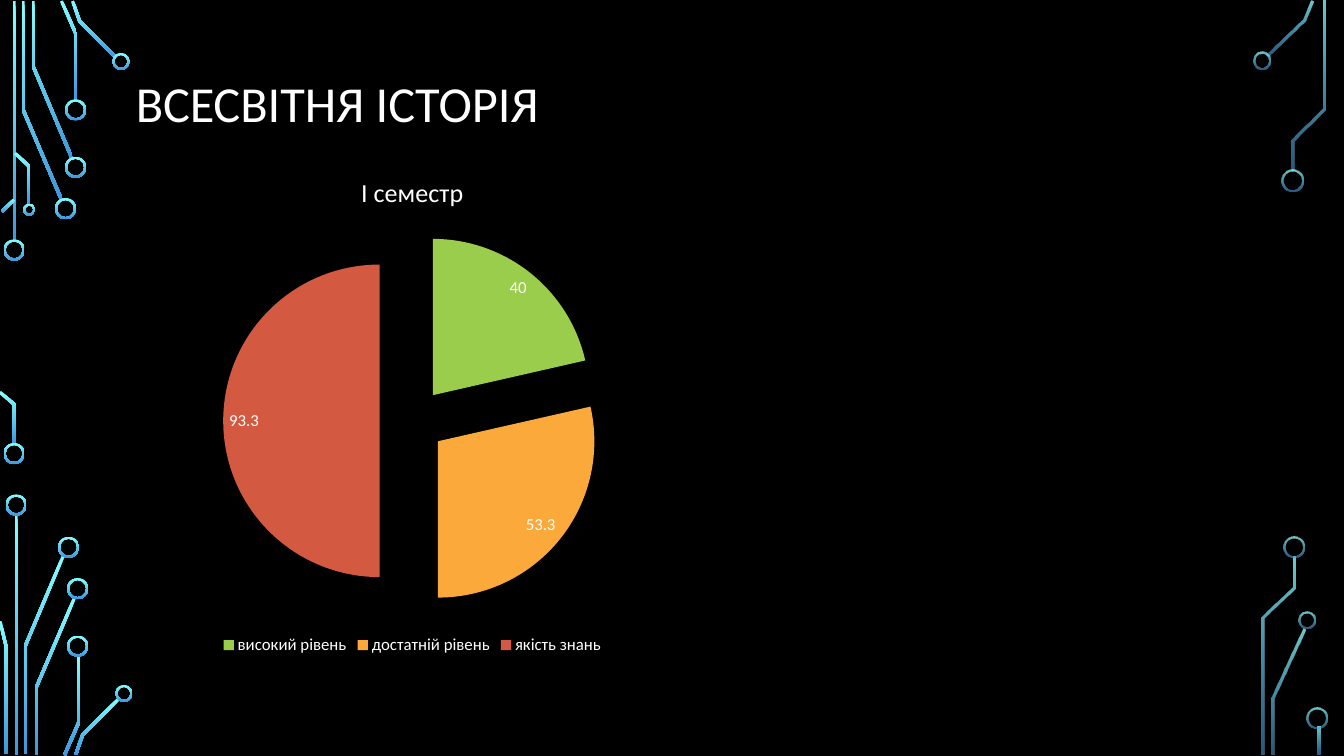
import math

import lxml.etree
import pptx
import pptx.chart.data
import pptx.dml.color
import pptx.enum.chart
import pptx.enum.shapes
import pptx.enum.text
import pptx.oxml.ns
import pptx.util

BLACK = pptx.dml.color.RGBColor(0x00, 0x00, 0x00)
WHITE = pptx.dml.color.RGBColor(0xFF, 0xFF, 0xFF)
AQUA = pptx.dml.color.RGBColor(0x82, 0xFF, 0xFF)
BLUE = pptx.dml.color.RGBColor(0x3D, 0x97, 0xDE)
GREEN = pptx.dml.color.RGBColor(0x9A, 0xCD, 0x4C)
ORANGE = pptx.dml.color.RGBColor(0xFA, 0xA9, 0x3A)
RED = pptx.dml.color.RGBColor(0xD3, 0x59, 0x40)

FONT = "Calibri"
SEMESTER = "І семестр"
LEVELS = [
    ("високий рівень", 40, GREEN),
    ("достатній рівень", 53.3, ORANGE),
    ("якість знань", 93.3, RED),
]

TRACE_WIDTH = 0.03
RING_WIDTH = 0.02
LARGE, MEDIUM, SMALL = 0.21, 0.17, 0.12

LEFT_TRACES = [
    [(0.14, 0.01), (0.14, 2.4)],
    [(0.61, 1.98), (0.23, 1.09), (0.23, 0.01)],
    [(0.71, 1.56), (0.33, 0.66), (0.33, 0.01)],
    [(0.75, 1), (0.75, 0.33), (0.61, 0.01)],
    [(1.15, 0.57), (0.79, 0.21), (0.72, 0.01)],
    [(0.02, 2.1), (0.14, 1.98)],
    [(0.14, 4.41), (0.14, 4.01), (0, 3.89)],
    [(0.29, 2.03), (0.29, 1.65), (0.15, 1.52)],
    [(0.16, 5.1), (0.16, 7.49)],
    [(0.25, 7.48), (0.25, 6.41), (0.63, 5.51)],
    [(0.06, 7.48), (0.06, 6.41), (0, 6.16)],
    [(0.36, 7.49), (0.36, 6.82), (0.74, 5.93)],
    [(0.64, 7.49), (0.78, 7.17), (0.78, 6.5)],
    [(0.75, 7.49), (0.82, 7.29), (1.18, 6.93)],
]
LEFT_RINGS = [
    (0.14, 2.48, LARGE), (0.14, 4.5, LARGE), (0.65, 2.07, LARGE),
    (0.75, 1.66, LARGE), (0.75, 1.09, LARGE), (1.2, 0.61, MEDIUM),
    (0.29, 2.08, SMALL), (0.16, 5.01, LARGE), (0.68, 5.43, LARGE),
    (0.77, 5.84, LARGE), (0.77, 6.41, LARGE), (1.23, 6.88, MEDIUM),
]
RIGHT_TRACES = [
    [(12.57, 0.55), (12.93, 0.2), (13.01, 0.01)],
    [(12.63, 7.49), (12.63, 6.93), (12.93, 6.24)],
    [(12.82, 1.69), (12.82, 1.39), (13.13, 1.08), (13.13, 0.01)],
    [(12.53, 7.49), (12.53, 6.13), (12.83, 5.83), (12.83, 5.52)],
    [(13.08, 7.49), (13.08, 7.21)],
]
RIGHT_RINGS = [
    (12.52, 0.6, MEDIUM), (12.82, 1.79, LARGE), (12.96, 6.15, MEDIUM),
    (12.83, 5.43, LARGE), (13.06, 7.12, LARGE),
]


def inches(value):
    return pptx.util.Cm(value * 2.54)


def style_font(font, size):
    font.name = FONT
    font.size = pptx.util.Pt(size)
    font.bold = False
    font.color.rgb = WHITE


def paint_circuit(shape, opacities):
    shape.shadow.inherit = False
    shape.line.fill.background()
    shape.fill.gradient()
    shape.fill.gradient_angle = 270
    for stop, color, position in zip(shape.fill.gradient_stops, (AQUA, BLUE), (0, 1)):
        stop.color.rgb = color
        stop.position = position
    colors = shape.element.spPr.iter(pptx.oxml.ns.qn("a:srgbClr"))
    for color, opacity in zip(list(colors), opacities):
        if opacity < 100:
            alpha = lxml.etree.SubElement(color, pptx.oxml.ns.qn("a:alpha"))
            alpha.set("val", str(opacity * 1000))


def trace_outline(points):
    normals = []
    for (x1, y1), (x2, y2) in zip(points, points[1:]):
        length = math.hypot(x2 - x1, y2 - y1)
        normals.append(((y1 - y2) / length, (x2 - x1) / length))
    left, right = [], []
    befores, afters = normals[:1] + normals, normals + normals[-1:]
    for (x, y), (ax, ay), (bx, by) in zip(points, befores, afters):
        scale = TRACE_WIDTH / 2 / (1 + ax * bx + ay * by)
        dx, dy = (ax + bx) * scale, (ay + by) * scale
        left.append((x + dx, y + dy))
        right.append((x - dx, y - dy))
    return [(inches(x), inches(y)) for x, y in left + right[::-1]]


def add_trace(slide, points, opacities):
    start, *rest = trace_outline(points)
    builder = slide.shapes.build_freeform(*start)
    builder.add_line_segments(rest, close=True)
    paint_circuit(builder.convert_to_shape(), opacities)


def add_ring(slide, x, y, size, opacities):
    ring = slide.shapes.add_shape(
        pptx.enum.shapes.MSO_SHAPE.DONUT,
        inches(x - size / 2), inches(y - size / 2), inches(size), inches(size))
    ring.adjustments[0] = RING_WIDTH / size
    paint_circuit(ring, opacities)


def add_circuit(slide, traces, rings, opacities):
    for points in traces:
        add_trace(slide, points, opacities)
    for x, y, size in rings:
        add_ring(slide, x, y, size, opacities)


def add_title(slide, text):
    title = slide.shapes.add_textbox(
        inches(1.25), inches(0.24), inches(10.83), inches(1.62))
    frame = title.text_frame
    frame.word_wrap = True
    frame.vertical_anchor = pptx.enum.text.MSO_ANCHOR.MIDDLE
    frame.text = text
    paragraph = frame.paragraphs[0]
    paragraph.line_spacing = 0.9
    style_font(paragraph.runs[0].font, 36)


def add_levels_pie(slide):
    data = pptx.chart.data.CategoryChartData()
    data.categories = [level for level, _, _ in LEVELS]
    data.add_series(SEMESTER, [value for _, value, _ in LEVELS])
    chart = slide.shapes.add_chart(
        pptx.enum.chart.XL_CHART_TYPE.PIE,
        inches(0.52), inches(1.53), inches(7.14), inches(5.01), data).chart
    style_font(chart.font, 10)

    chart.has_title = True
    heading = chart.chart_title
    heading.include_in_layout = False
    heading.text_frame.text = SEMESTER
    style_font(heading.text_frame.paragraphs[0].runs[0].font, 18.6)

    chart.has_legend = True
    chart.legend.position = pptx.enum.chart.XL_LEGEND_POSITION.BOTTOM
    chart.legend.include_in_layout = False
    style_font(chart.legend.font, 12)

    plot = chart.plots[0]
    plot.vary_by_categories = True
    series = plot.series[0]
    for index, (_, _, color) in enumerate(LEVELS):
        sector = series.points[index].format
        sector.fill.solid()
        sector.fill.fore_color.rgb = color
        sector.line.fill.background()
    explosion = lxml.etree.Element(pptx.oxml.ns.qn("c:explosion"), val="21")
    series._element.find(pptx.oxml.ns.qn("c:dPt")).addprevious(explosion)

    labels = series.data_labels
    labels.show_value = True
    labels.position = pptx.enum.chart.XL_LABEL_POSITION.INSIDE_END
    style_font(labels.font, 12)


def main():
    presentation = pptx.Presentation()
    presentation.slide_width = inches(13.33)
    presentation.slide_height = inches(7.5)
    slide = presentation.slides.add_slide(presentation.slide_layouts[6])
    slide.background.fill.solid()
    slide.background.fill.fore_color.rgb = BLACK
    add_circuit(slide, LEFT_TRACES, LEFT_RINGS, (100, 100))
    add_circuit(slide, RIGHT_TRACES, RIGHT_RINGS, (80, 60))
    add_title(slide, "ВСЕСВІТНЯ ІСТОРІЯ")
    add_levels_pie(slide)
    presentation.save("out.pptx")


if __name__ == "__main__":
    main()
